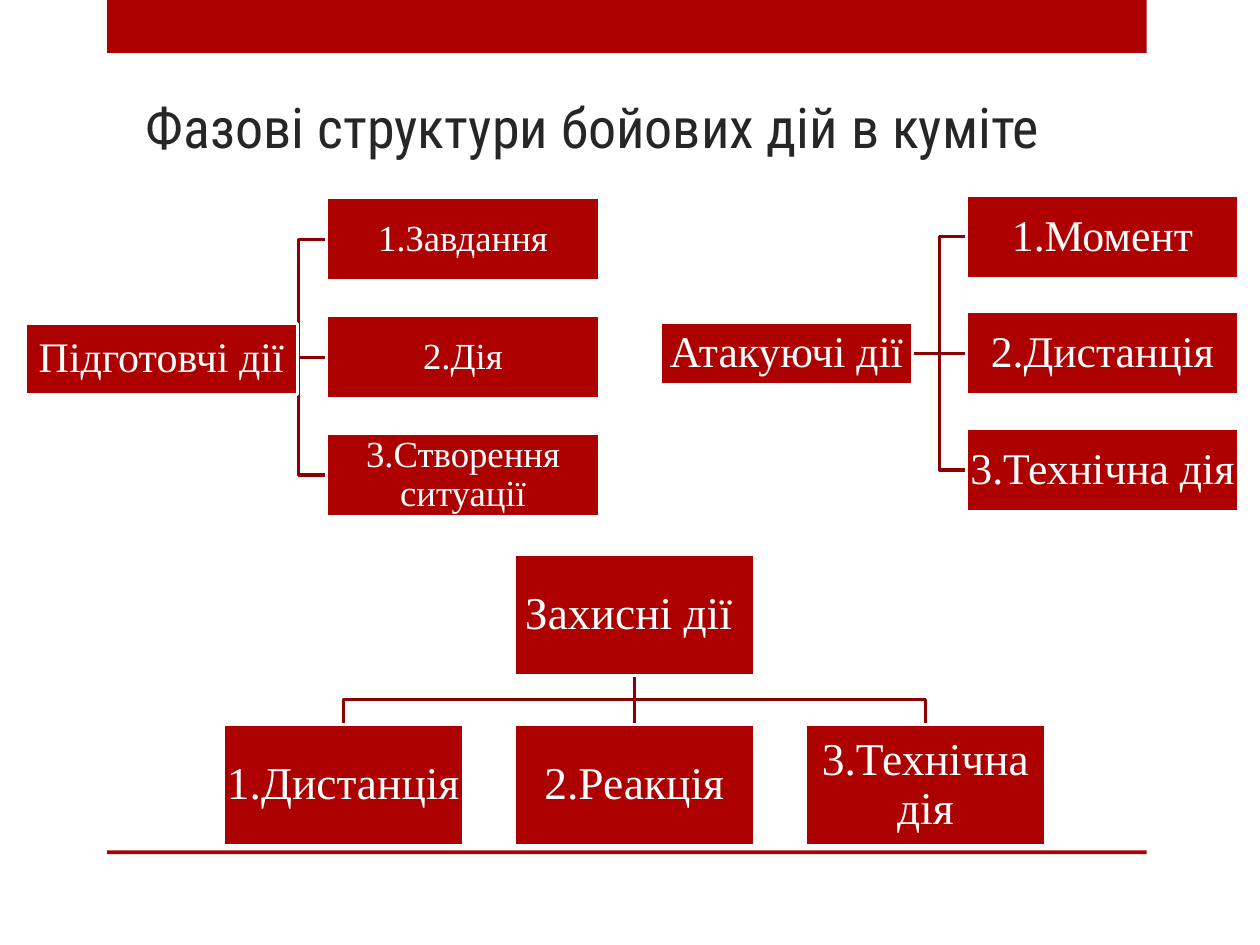
from dataclasses import dataclass

from lxml import etree
from pptx import Presentation
from pptx.dml.color import RGBColor
from pptx.enum.shapes import MSO_CONNECTOR, MSO_SHAPE
from pptx.enum.text import MSO_ANCHOR, PP_ALIGN
from pptx.oxml.ns import qn
from pptx.util import Inches, Pt

RECTANGLE = MSO_SHAPE.RECTANGLE
STRAIGHT = MSO_CONNECTOR.STRAIGHT
MIDDLE = MSO_ANCHOR.MIDDLE
BOTTOM = MSO_ANCHOR.BOTTOM
CENTER = PP_ALIGN.CENTER


@dataclass(frozen=True)
class Theme:
    red: RGBColor = RGBColor(0xAD, 0x01, 0x01)
    dark_red: RGBColor = RGBColor(0x8B, 0x01, 0x01)
    white: RGBColor = RGBColor(0xFF, 0xFF, 0xFF)
    ink: RGBColor = RGBColor(0x26, 0x26, 0x26)
    title_font: str = "Roboto Condensed"
    body_font: str = "Times New Roman"
    title_size: int = 32
    line_width: float = 1.75


THEME = Theme()


@dataclass(frozen=True)
class Box:
    left: float
    top: float
    width: float
    height: float

    @property
    def center_x(self) -> float:
        return self.left + self.width / 2

    @property
    def center_y(self) -> float:
        return self.top + self.height / 2

    def shifted(self, across: float, down: float) -> "Box":
        return Box(self.left + across, self.top + down, self.width, self.height)


@dataclass(frozen=True)
class Hierarchy:
    """A parent box with equally spaced children, to its right or below it."""
    parent: str
    parent_box: Box
    children: tuple[str, ...]
    first_child: Box
    step: float
    bend: float
    parent_size: int
    child_size: int
    child_inset: float = 0.02
    downward: bool = False


HIERARCHIES = (
    Hierarchy("Підготовчі дії", Box(0.2, 2.57, 2.16, 0.56),
              ("1.Завдання", "2.Дія", "3.Створення ситуації"),
              Box(2.59, 1.57, 2.17, 0.66), 0.935, 2.37, 24, 21, 0.01),
    Hierarchy("Атакуючі дії", Box(5.24, 2.56, 2, 0.49),
              ("1.Момент", "2.Дистанція", "3.Технічна дія"),
              Box(7.67, 1.55, 2.16, 0.66), 0.925, 7.46, 25, 25),
    Hierarchy("Захисні дії ", Box(4.08, 4.4, 1.91, 0.96),
              ("1.Дистанція", "2.Реакція", "3.Технічна дія"),
              Box(1.77, 5.75, 1.91, 0.96), 2.31, 5.55, 26, 26, downward=True),
)


def add_bar(slide, box: Box):
    shape = slide.shapes.add_shape(RECTANGLE, Inches(box.left), Inches(box.top),
                                   Inches(box.width), Inches(box.height))
    shape.shadow.inherit = False
    shape.fill.solid()
    shape.fill.fore_color.rgb = THEME.red
    shape.line.fill.background()
    return shape


def add_node(slide, box: Box, text: str, size: int, inset: float) -> None:
    shape = add_bar(slide, box)
    shape.line.color.rgb = THEME.white
    shape.line.width = Pt(THEME.line_width)
    frame = shape.text_frame
    frame.word_wrap = True
    frame.vertical_anchor = MIDDLE
    frame.margin_left = frame.margin_right = Inches(inset)
    frame.margin_top = frame.margin_bottom = Inches(inset)
    paragraph = frame.paragraphs[0]
    paragraph.text = text
    paragraph.alignment = CENTER
    paragraph.line_spacing = 0.9
    paragraph.font.name = THEME.body_font
    paragraph.font.size = Pt(size)
    paragraph.font.color.rgb = THEME.white


def add_link(slide, points: list[tuple[float, float]]) -> None:
    """Draw a straight connector between aligned ends, otherwise an elbow."""
    corners = [(Inches(x), Inches(y)) for x, y in points]
    start, end = corners[0], corners[-1]
    tolerance = Inches(0.02)
    if abs(start[0] - end[0]) < tolerance or abs(start[1] - end[1]) < tolerance:
        link = slide.shapes.add_connector(STRAIGHT, *start, *end)
        etree.SubElement(link._element.spPr, qn("a:effectLst"))
    else:
        builder = slide.shapes.build_freeform(*start)
        builder.add_line_segments(corners[1:], close=False)
        link = builder.convert_to_shape()
        link.shadow.inherit = False
        link.fill.background()
    link.line.color.rgb = THEME.dark_red
    link.line.width = Pt(THEME.line_width)


def link_points(hierarchy: Hierarchy, child: Box) -> list[tuple[float, float]]:
    parent, bend = hierarchy.parent_box, hierarchy.bend
    if hierarchy.downward:
        return [(parent.center_x, parent.top + parent.height),
                (parent.center_x, bend), (child.center_x, bend),
                (child.center_x, child.top)]
    start_y = parent.center_y
    if abs(start_y - child.center_y) < 0.02:
        start_y = child.center_y
    return [(parent.left + parent.width, start_y), (bend, start_y),
            (bend, child.center_y), (child.left, child.center_y)]


def add_hierarchy(slide, hierarchy: Hierarchy) -> None:
    across, down = (hierarchy.step, 0) if hierarchy.downward else (0, hierarchy.step)
    boxes = [hierarchy.first_child.shifted(index * across, index * down)
             for index in range(len(hierarchy.children))]
    for box in boxes:
        add_link(slide, link_points(hierarchy, box))
    add_node(slide, hierarchy.parent_box, hierarchy.parent, hierarchy.parent_size, 0.02)
    for box, text in zip(boxes, hierarchy.children):
        add_node(slide, box, text, hierarchy.child_size, hierarchy.child_inset)


def add_title(slide, text: str) -> None:
    title = slide.shapes.add_textbox(Inches(1.06), Inches(0.29), Inches(7.87), Inches(1.03))
    frame = title.text_frame
    frame.word_wrap = True
    frame.vertical_anchor = BOTTOM
    paragraph = frame.paragraphs[0]
    paragraph.text = text
    paragraph.font.name = THEME.title_font
    paragraph.font.size = Pt(THEME.title_size)
    paragraph.font.color.rgb = THEME.ink


def main() -> None:
    presentation = Presentation()
    presentation.slide_width = Inches(10)
    presentation.slide_height = Inches(7.5)
    slide = presentation.slides.add_slide(presentation.slide_layouts[6])
    add_bar(slide, Box(0.85, 0, 8.25, 0.42))
    add_bar(slide, Box(0.85, 6.75, 8.25, 0.03))
    add_title(slide, "Фазові структури бойових дій в куміте")
    for hierarchy in HIERARCHIES:
        add_hierarchy(slide, hierarchy)
    presentation.save("out.pptx")


if __name__ == "__main__":
    main()
